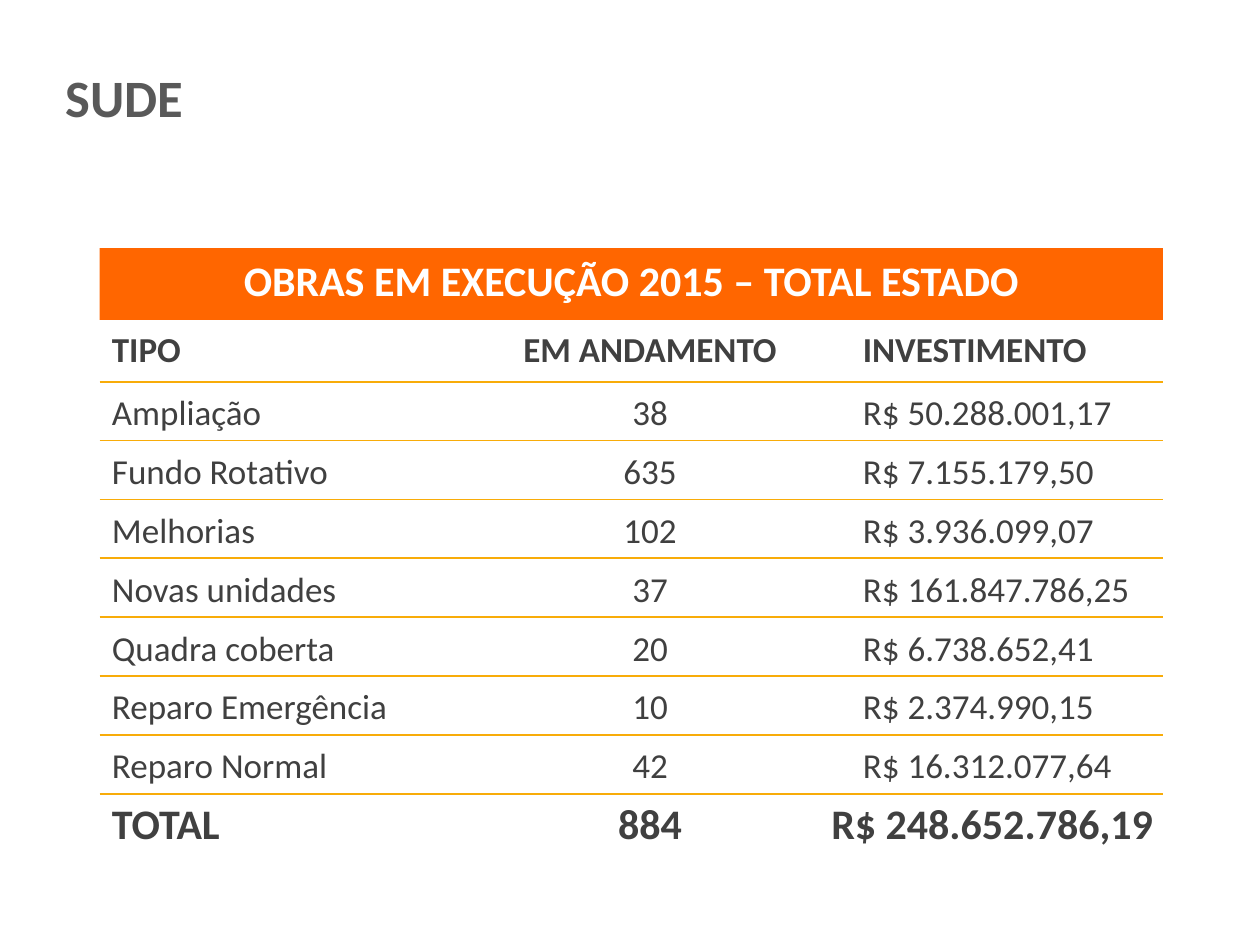
from dataclasses import dataclass

from lxml.etree import SubElement
from pptx import Presentation
from pptx.dml.color import RGBColor
from pptx.enum.shapes import MSO_CONNECTOR as Connector, MSO_SHAPE as Preset
from pptx.enum.text import MSO_ANCHOR as Anchor, MSO_AUTO_SIZE as AutoSize, PP_ALIGN as Align
from pptx.oxml.ns import qn
from pptx.util import Inches, Pt

FONT = "Calibri"
ORANGE = "FF6600"
AMBER = "F8AC09"
WHITE = "FFFFFF"
GRAY = "595959"
DARK = "404040"

TABLE_LEFT = 0.79
TABLE_WIDTH = 8.44
HEADING_TOP = 2.55
ENTRIES_TOP = 2.92
TOTAL_TOP = 6.28
FIRST_RULE = 3.03
RULE_STEP = 0.467


@dataclass(frozen=True)
class Column:
    heading: str
    entries: tuple[str, ...]
    total: str
    left: float
    heading_width: float
    entries_width: float
    total_left: float
    total_width: float
    align: Align = Align.LEFT


COLUMNS = (
    Column(
        "TIPO",
        ("Ampliação", "Fundo Rotativo", "Melhorias", "Novas unidades",
         "Quadra coberta", "Reparo Emergência", "Reparo Normal"),
        "TOTAL", TABLE_LEFT, 3.63, 2.99, TABLE_LEFT, 3.63,
    ),
    Column(
        "EM ANDAMENTO",
        ("38", "635", "102", "37", "20", "10", "42"),
        "884", 3.96, 2.4, 2.4, 3.96, 2.4, Align.CENTER,
    ),
    Column(
        "INVESTIMENTO",
        ("R$ 50.288.001,17", "R$ 7.155.179,50", "R$ 3.936.099,07",
         "R$ 161.847.786,25", "R$ 6.738.652,41", "R$ 2.374.990,15",
         "R$ 16.312.077,64"),
        "R$ 248.652.786,19", 6.75, 2.4, 2.4, 6.5, 2.97,
    ),
)


def rgb(code: str) -> RGBColor:
    return RGBColor.from_string(code)


def add_text(slide, lines: tuple[str, ...], left: float, top: float, width: float,
             height: float, *, size: int = 20, color: str = DARK, bold: bool = False,
             align: Align = Align.LEFT, spacing: float = 1.0,
             anchor: Anchor = Anchor.TOP, bottom: float = 0.05, grow: bool = True):
    box = slide.shapes.add_textbox(Inches(left), Inches(top), Inches(width), Inches(height))
    frame = box.text_frame
    frame.word_wrap = True
    frame.auto_size = AutoSize.SHAPE_TO_FIT_TEXT if grow else AutoSize.NONE
    frame.vertical_anchor = anchor
    frame.margin_bottom = Inches(bottom)
    frame.text = "\n".join(lines)
    for paragraph in frame.paragraphs:
        paragraph.alignment = align
        paragraph.line_spacing = spacing
        font = paragraph.runs[0].font
        font.name = FONT
        font.size = Pt(size)
        font.bold = bold
        font.color.rgb = rgb(color)


def add_banner(slide) -> None:
    banner = slide.shapes.add_shape(Preset.RECTANGLE, Inches(TABLE_LEFT), Inches(1.97),
                                    Inches(TABLE_WIDTH), Inches(0.57))
    banner.shadow.inherit = False
    banner.fill.solid()
    banner.fill.fore_color.rgb = rgb(ORANGE)
    banner.line.fill.background()
    add_text(slide, ("OBRAS EM EXECUÇÃO 2015 – TOTAL ESTADO",), TABLE_LEFT, 1.97,
             TABLE_WIDTH, 0.5, size=24, color=WHITE, bold=True, align=Align.CENTER)


def add_rule(slide, top: float) -> None:
    rule = slide.shapes.add_connector(Connector.STRAIGHT, Inches(TABLE_LEFT), Inches(top),
                                      Inches(TABLE_LEFT + TABLE_WIDTH), Inches(top))
    rule.line.color.rgb = rgb(AMBER)
    rule.line.width = Pt(1)
    SubElement(rule.element.spPr, qn("a:effectLst"))


def add_column(slide, column: Column) -> None:
    add_text(slide, (column.heading,), column.left, HEADING_TOP, column.heading_width,
             0.44, bold=True, align=column.align)
    add_text(slide, column.entries, column.left, ENTRIES_TOP, column.entries_width,
             3.38, align=column.align, spacing=1.4)
    add_text(slide, (column.total,), column.total_left, TOTAL_TOP, column.total_width,
             0.5, size=24, bold=True, align=column.align)


def main() -> None:
    deck = Presentation()
    deck.slide_width = Inches(10)
    deck.slide_height = Inches(7.5)
    slide = deck.slides.add_slide(deck.slide_layouts[6])

    add_banner(slide)
    add_text(slide, ("SUDE",), 0.42, 0.11, 3.09, 0.99, size=30, color=GRAY, bold=True,
             spacing=0.8, anchor=Anchor.BOTTOM, bottom=0.09, grow=False)
    for column in COLUMNS:
        add_column(slide, column)
    for index in range(len(COLUMNS[0].entries) + 1):
        add_rule(slide, FIRST_RULE + index * RULE_STEP)

    deck.save("out.pptx")


if __name__ == "__main__":
    main()
